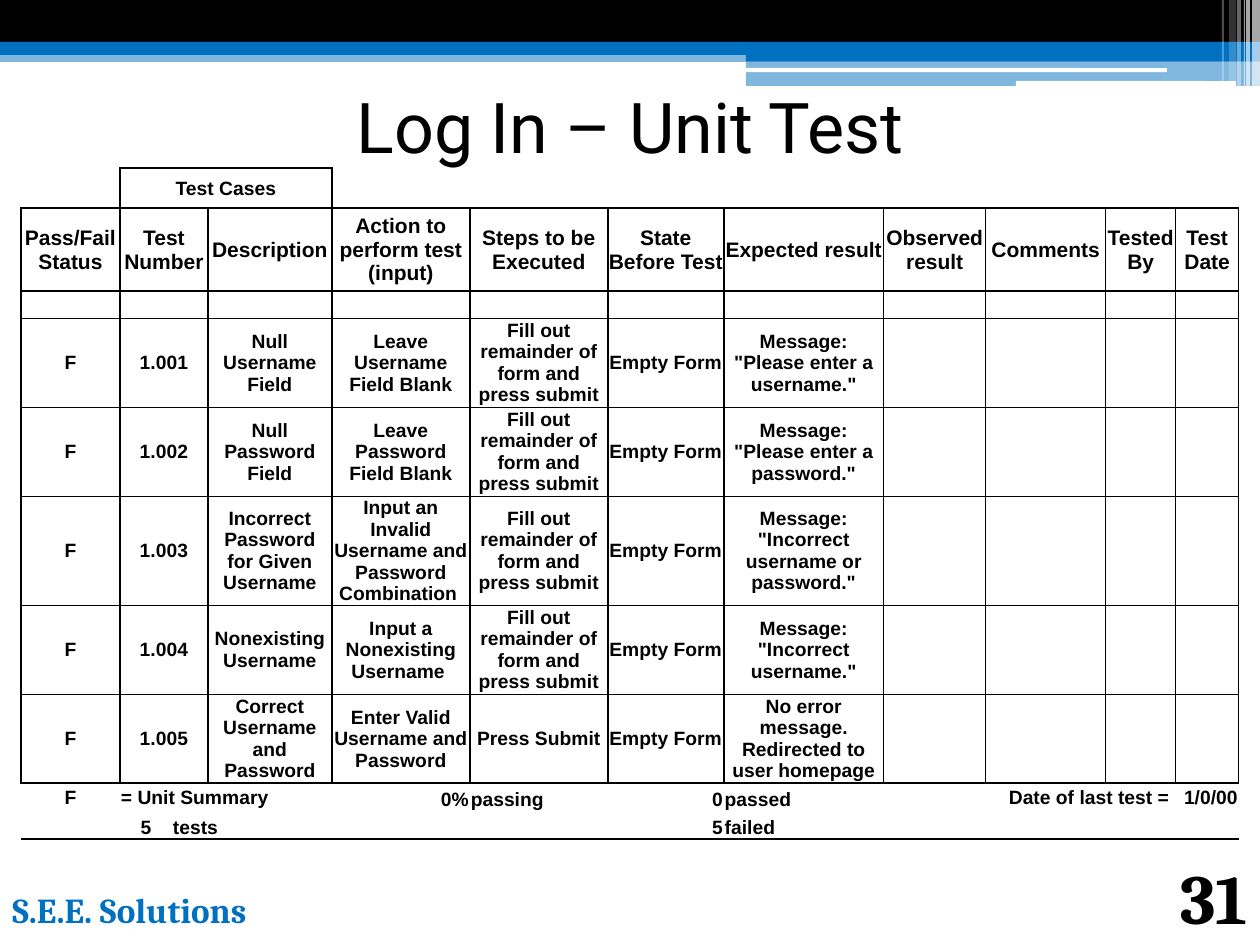
from dataclasses import dataclass

from lxml import etree
from pptx import Presentation
from pptx.dml.color import RGBColor
from pptx.enum.shapes import MSO_SHAPE
from pptx.enum.text import MSO_ANCHOR, MSO_AUTO_SIZE, PP_ALIGN
from pptx.oxml.ns import qn
from pptx.util import Emu, Pt

RECT, ROUND = MSO_SHAPE.RECTANGLE, MSO_SHAPE.ROUNDED_RECTANGLE
TOP, MID, LOW = MSO_ANCHOR.TOP, MSO_ANCHOR.MIDDLE, MSO_ANCHOR.BOTTOM
ALIGN = {"l": PP_ALIGN.LEFT, "c": PP_ALIGN.CENTER, "r": PP_ALIGN.RIGHT}
PLAIN = "{2D5ABB26-0587-4C30-8999-92F81FD0307C}"


@dataclass(frozen=True)
class Theme:
    black: str = "000000"
    white: str = "FFFFFF"
    blue: str = "0070C0"
    head: str = "Roboto"
    body: str = "Arial"
    foot: str = "Cambria"
    big: int = 40
    brand: int = 20
    label: int = 12
    small: int = 11


def px(n):
    return Emu(round(n * 914400 / 126))


def box(*spots):
    return [px(n) for n in spots]


class Deck:
    def __init__(self, theme):
        self.theme = theme
        self.prs = Presentation()
        self.prs.slide_width, self.prs.slide_height = box(1260, 945)
        self.slide = self.prs.slides.add_slide(self.prs.slide_layouts[5])

    def style(self, par, face, size, color, bold=False, align="l"):
        par.alignment = ALIGN[align]
        for run in par.runs:
            font = run.font
            font.name, font.size, font.bold = face, Pt(size), bold
            font.color.rgb = RGBColor.from_string(color)

    def bar(self, spot, color, alpha=100, kind=RECT):
        shape = self.slide.shapes.add_shape(kind, *box(*spot))
        shape.shadow.inherit = False
        shape.line.fill.background()
        shape.fill.solid()
        shape.fill.fore_color.rgb = RGBColor.from_string(color)
        if alpha < 100:
            tone = shape.fill._xPr.find(".//" + qn("a:srgbClr"))
            etree.SubElement(tone, qn("a:alpha")).set("val", str(alpha * 1000))

    def title(self, text, spot):
        shape = self.slide.shapes.title
        shape.left, shape.top, shape.width, shape.height = box(*spot)
        frame = shape.text_frame
        frame.text = text
        frame.auto_size, frame.vertical_anchor = MSO_AUTO_SIZE.NONE, MID
        self.style(frame.paragraphs[0], self.theme.head, self.theme.big,
                   self.theme.black, align="c")

    def note(self, text, spot, size, color, align="l", anchor=TOP):
        frame = self.slide.shapes.add_textbox(*box(*spot)).text_frame
        frame.text, frame.word_wrap, frame.vertical_anchor = text, True, anchor
        self.style(frame.paragraphs[0], self.theme.foot, size, color, True, align)

    def edge(self, cell, sides):
        props = cell._tc.get_or_add_tcPr()
        for side in "LRTB":
            width = sides.get(side, 0)
            line = etree.SubElement(props, qn("a:ln" + side), w=str(Pt(width)))
            if width:
                fill = etree.SubElement(line, qn("a:solidFill"))
                etree.SubElement(fill, qn("a:srgbClr"), val=self.theme.black)
            else:
                etree.SubElement(line, qn("a:noFill"))

    def cell(self, cell, text, size, align, anchor, sides):
        self.edge(cell, sides)
        cell.fill.background()
        cell.margin_left = cell.margin_right = cell.margin_top = px(1)
        cell.margin_bottom = 0
        cell.vertical_anchor = anchor
        par = cell.text_frame.paragraphs[0]
        if text:
            par.text = text
            self.style(par, self.theme.body, size, self.theme.black, True, align)
        else:
            par._p.get_or_add_endParaRPr().set("sz", str(size * 100))

    def table(self, rows, spot, wide, high):
        frame = self.slide.shapes.add_table(
            len(rows), len(wide), *box(*spot, sum(wide), sum(high)))
        table = frame.table
        table.first_row = table.horz_banding = False
        table._tbl.tblPr.find(qn("a:tableStyleId")).text = PLAIN
        for col, size in zip(table.columns, wide):
            col.width = px(size)
        for row, size in zip(table.rows, high):
            row.height = px(size)
        for y, row in enumerate(rows):
            for x, text in enumerate(row):
                size = self.theme.label if y == 1 else self.theme.small
                low = y == 9 or y == 8 and 4 <= x <= 7
                self.cell(table.cell(y, x), text, size, SIDES.get(y, "c" * 13)[x],
                          LOW if low else MID, edges(y, x))
            for x, text in enumerate(row):
                if text is not None and row[x + 1:x + 2] == [None]:
                    end = x + 1
                    while end + 1 < len(row) and row[end + 1] is None:
                        end += 1
                    table.cell(y, x).merge(table.cell(y, end))


def edges(y, x):
    if y == 8:
        return {"T": 1}
    if y == 9:
        return {"B": 1}
    if y == 0:
        if 1 <= x <= 3:
            return dict.fromkeys("LRTB", 1)
        return {"B": 1, **{0: {"R": 1}, 4: {"L": 1}}.get(x, {})}
    return {"L": 1, "R": 1, "T": 1 if y < 3 else 0.5,
            "B": 1 if y in (1, 7) else 0.5}


SIDES = {8: "clllrlrlcrrrr", 9: "ccllccrlccccc"}
FILL = "Fill out remainder of form and press submit"
TESTS = [
    ("Null Username Field", "Leave Username Field Blank", FILL,
     'Message: "Please enter a username."'),
    ("Null Password Field", "Leave Password Field Blank", FILL,
     'Message: "Please enter a password."'),
    ("Incorrect Password for Given Username",
     "Input an Invalid Username and Password Combination ", FILL,
     'Message: "Incorrect username or password."'),
    ("Nonexisting Username", "Input a Nonexisting Username ", FILL,
     'Message: "Incorrect username."'),
    ("Correct Username and Password", "Enter Valid Username and Password",
     "Press Submit", "No error message. Redirected to user homepage"),
]
ROWS = [
    ["", "Test Cases", None, None, "", "", "", "", "", "", "", None, ""],
    ["Pass/Fail Status", "Test Number", None, "Description",
     "Action to perform test (input)", "Steps to be Executed",
     "State Before Test", "Expected result", "Observed result", "Comments",
     "Tested By", None, "Test Date"],
    ["", "", None, "", "", "", "", "", "", "", "", None, ""],
    *[["F", f"1.{n:03}", None, what, act, steps, "Empty Form", want,
       "", "", "", None, ""]
      for n, (what, act, steps, want) in enumerate(TESTS, 1)],
    ["F", "= Unit Summary", None, None, "0%", "passing", "0", "passed", "",
     "Date of last test = ", None, None, "1/0/00"],
    ["", "5", "tests", None, "", "", "5", "failed", "", "", None, "", ""],
]
WIDE = [99, 52, 36, 124, 138, 138, 116, 160, 102, 120, 56, 14, 63]
HIGH = [40, 83, 27, 89, 89, 109, 89, 89, 28, 28]


def main():
    theme = Theme()
    deck = Deck(theme)
    deck.bar((0, 50, 1260, 12), theme.blue, 50)
    deck.bar((0, 0, 1260, 42), theme.black)
    deck.bar((0, 42, 1260, 13), theme.blue)
    deck.bar((746, 49, 514, 12), theme.blue)
    deck.bar((746, 61, 514, 25), theme.blue, 50)
    deck.bar((745, 68, 422, 4), theme.white, kind=ROUND)
    deck.bar((1016, 81, 220, 5), theme.white, kind=ROUND)
    for left, wide, high, alpha in [(1252, 8, 86, 65), (1246, 4, 86, 65),
                                    (1244, 1, 86, 60), (1237, 4, 86, 40),
                                    (1229, 7, 81, 20), (1222, 2, 81, 30)]:
        deck.bar((left, 0, wide, high), theme.white, alpha)
    deck.title("Log In – Unit Test", (63, 63, 1134, 126))
    deck.table(ROWS, (21, 168), WIDE, HIGH)
    deck.note("S.E.E. Solutions", (0, 882, 315, 63), theme.brand, theme.blue)
    deck.note("31", (1134, 869, 126, 76), theme.big, theme.black, "r", LOW)
    deck.prs.save("out.pptx")


if __name__ == "__main__":
    main()
